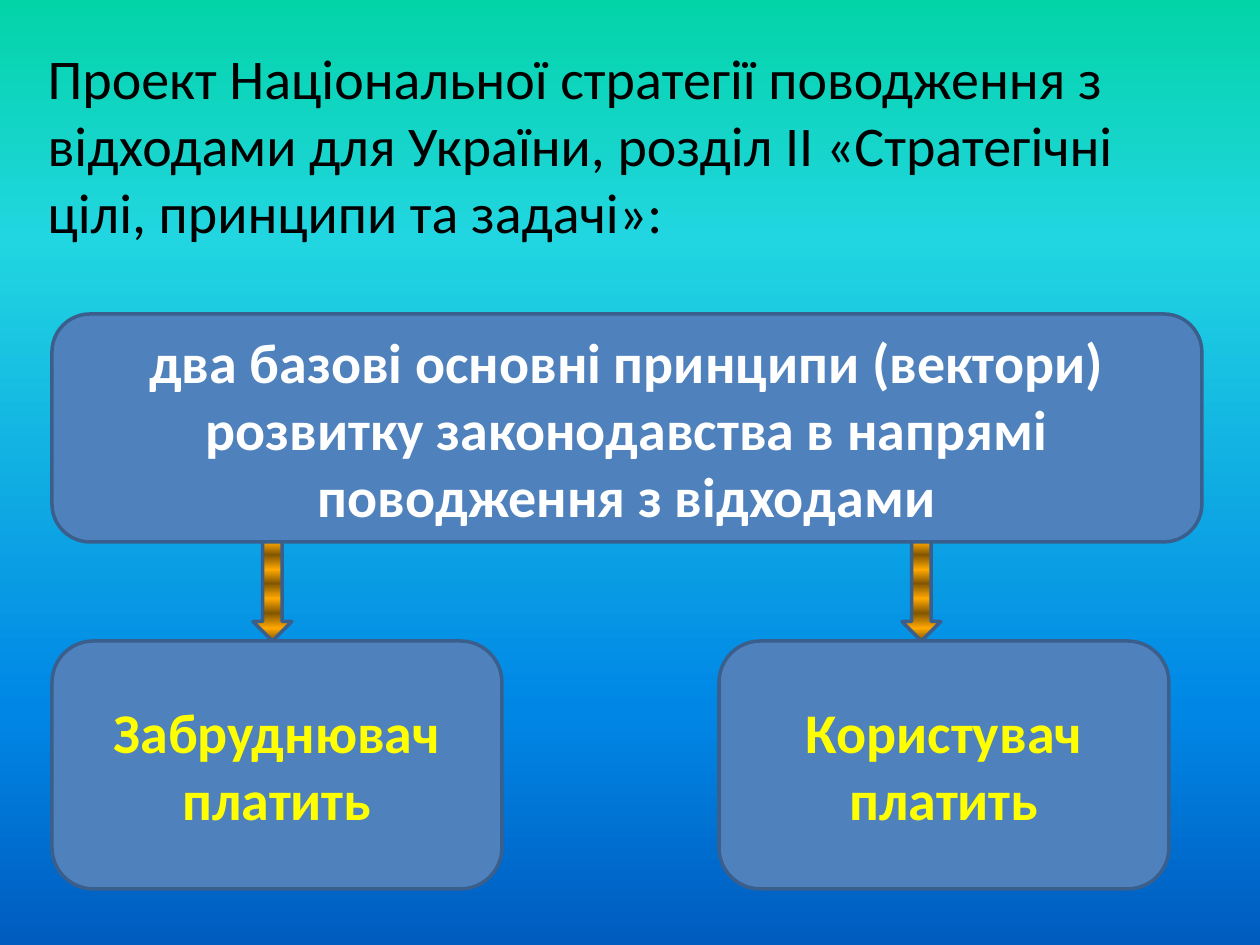
"""Build a slide on the two basic principles of waste management law."""
from dataclasses import dataclass

from lxml import etree
from pptx import Presentation
from pptx.dml.color import RGBColor
from pptx.enum.shapes import MSO_SHAPE
from pptx.enum.text import MSO_ANCHOR, MSO_AUTO_SIZE, PP_ALIGN
from pptx.oxml.ns import qn
from pptx.util import Pt

PX = 914400 // 126
ROUNDED, DOWN_ARROW = MSO_SHAPE.ROUNDED_RECTANGLE, MSO_SHAPE.DOWN_ARROW
LEFT, CENTER = PP_ALIGN.LEFT, PP_ALIGN.CENTER
TOP, MIDDLE = MSO_ANCHOR.TOP, MSO_ANCHOR.MIDDLE


@dataclass(frozen=True)
class Theme:
    font: str = "Calibri"
    size: int = 32
    line_width: int = 2
    black: str = "000000"
    white: str = "FFFFFF"
    yellow: str = "FFFF00"
    box: str = "4F81BD"
    outline: str = "3A5F8C"
    sky: tuple = ((0, "03D4A8"), (25, "21D6E0"), (75, "0087E6"), (100, "005CBF"))
    brown: str = "825600"
    amber: str = "FFA800"
    stripe_positions: tuple = (0, 13, 28, 43, 58, 72, 87, 100)


THEME = Theme()


def write_text(shape, text, *, color, bold=False, align=CENTER, anchor=MIDDLE):
    frame = shape.text_frame
    frame.word_wrap = True
    frame.vertical_anchor = anchor
    paragraph = frame.paragraphs[0]
    paragraph.alignment = align
    run = paragraph.add_run()
    run.text = text
    run.font.name = THEME.font
    run.font.size = Pt(THEME.size)
    run.font.bold = bold
    run.font.color.rgb = RGBColor.from_string(color)


def paint_gradient(fill, owner, stops, angle):
    fill.gradient()
    fill.gradient_angle = angle
    stop_list = next(owner.iter(qn("a:gsLst")))
    for stop in list(stop_list):
        stop_list.remove(stop)
    for position, color in stops:
        stop = etree.SubElement(stop_list, qn("a:gs"), pos=str(position * 1000))
        etree.SubElement(stop, qn("a:srgbClr"), val=color)


presentation = Presentation()
presentation.slide_width = 1260 * PX
presentation.slide_height = 945 * PX
slide = presentation.slides.add_slide(presentation.slide_layouts[5])
paint_gradient(slide.background.fill, slide.element, THEME.sky, 270)

title = slide.shapes.title
title.left, title.top, title.width, title.height = (
    length * PX for length in (35, 37, 1191, 217)
)
write_text(
    title,
    "Проект Національної стратегії поводження з відходами для України, "
    "розділ ІІ «Стратегічні цілі, принципи та задачі»:",
    color=THEME.black, align=LEFT, anchor=TOP,
)
title.text_frame.auto_size = MSO_AUTO_SIZE.SHAPE_TO_FIT_TEXT

stripes = [
    (position, (THEME.brown, THEME.amber)[index % 2])
    for index, position in enumerate(THEME.stripe_positions)
]
banner_text = (
    "два базові основні принципи (вектори) розвитку законодавства "
    "в напрямі поводження з відходами"
)
items = [
    (ROUNDED, (52, 314, 1150, 228), banner_text, THEME.white),
    (ROUNDED, (52, 641, 450, 248), "Забруднювач платить", THEME.yellow),
    (ROUNDED, (719, 641, 450, 248), "Користувач платить", THEME.yellow),
    (DOWN_ARROW, (253, 542, 39, 99), None, None),
    (DOWN_ARROW, (902, 542, 39, 99), None, None),
]
for kind, bounds, text, color in items:
    shape = slide.shapes.add_shape(kind, *(length * PX for length in bounds))
    shape.shadow.inherit = False
    shape.line.color.rgb = RGBColor.from_string(THEME.outline)
    shape.line.width = Pt(THEME.line_width)
    if text:
        shape.fill.solid()
        shape.fill.fore_color.rgb = RGBColor.from_string(THEME.box)
        write_text(shape, text, color=color, bold=True)
    else:
        paint_gradient(shape.fill, shape.element, stripes, 90)

presentation.save("out.pptx")
